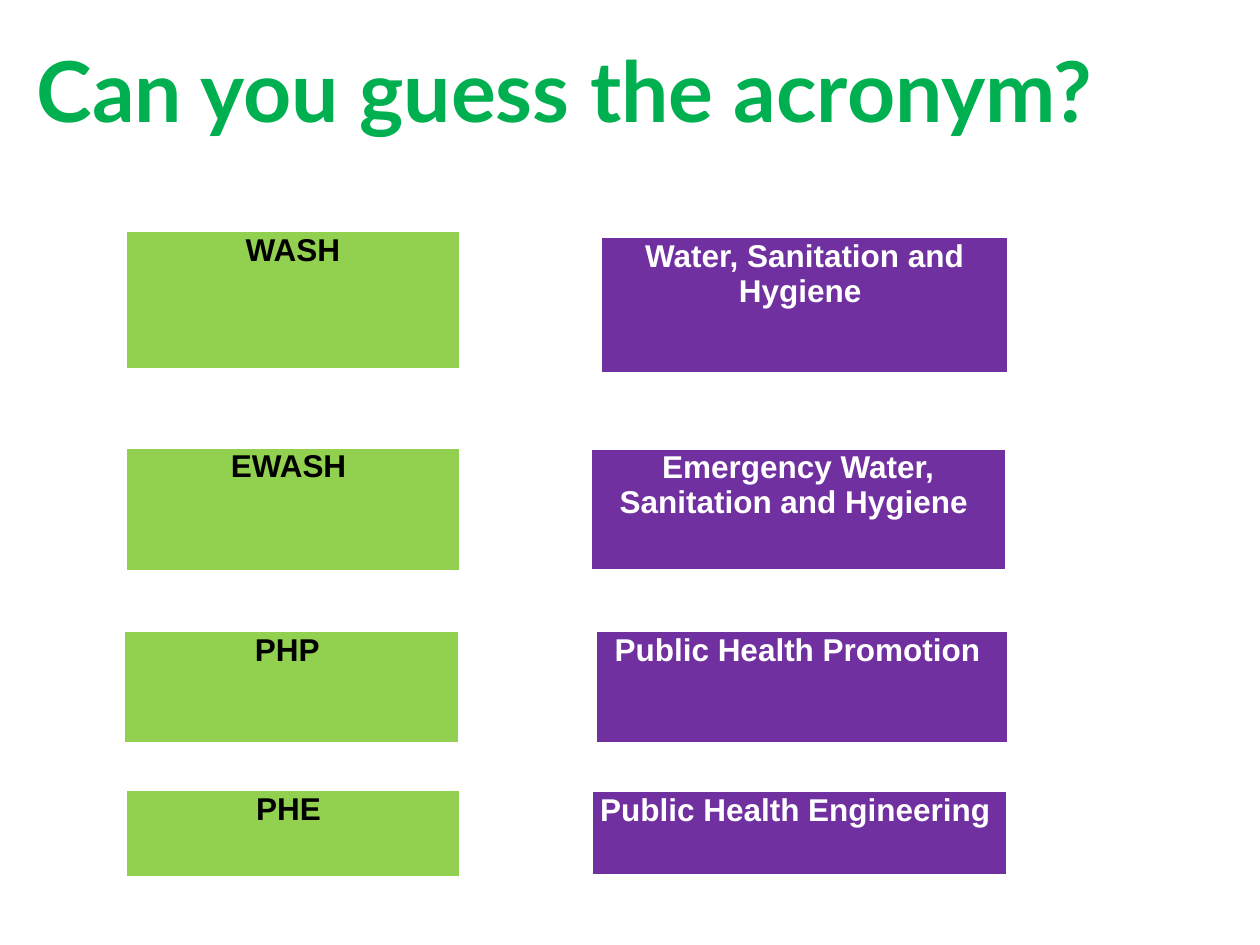
from dataclasses import dataclass

import pptx
import pptx.dml.color
import pptx.enum.text
import pptx.oxml
import pptx.oxml.ns
import pptx.util
from pptx.util import Cm


@dataclass(frozen=True)
class Theme:
    title_color: str = "00B050"
    acronym_fill: str = "92D050"
    acronym_color: str = "000000"
    meaning_fill: str = "7030A0"
    meaning_color: str = "FFFFFF"
    border_color: str = "FFFFFF"
    title_font: str = "Lato"
    body_font: str = "Arial"
    title_size: int = 48
    body_size: int = 18
    thin: float = 1
    thick: float = 1.5


THEME = Theme()
ALIGN = pptx.enum.text.PP_ALIGN


def rgb(value):
    return pptx.dml.color.RGBColor.from_string(value)


def write_text(frame, text, *, font, size, color, align=ALIGN.LEFT, line_spacing=None):
    frame.word_wrap = True
    para = frame.paragraphs[0]
    para.alignment = align
    if line_spacing:
        para.line_spacing = pptx.util.Pt(line_spacing)
    span = para.add_run()
    span.text = text
    span.font.name = font
    span.font.size = pptx.util.Pt(size)
    span.font.bold = True
    span.font.color.rgb = rgb(color)


def set_borders(cell, top, bottom):
    properties = cell._tc.get_or_add_tcPr()
    widths = {"lnL": THEME.thin, "lnR": THEME.thin, "lnT": top, "lnB": bottom}
    for index, (side, width) in enumerate(widths.items()):
        line = pptx.oxml.parse_xml(
            f'<a:{side} {pptx.oxml.ns.nsdecls("a")} w="{int(pptx.util.Pt(width))}">'
            f'<a:solidFill><a:srgbClr val="{THEME.border_color}"/></a:solidFill></a:{side}>'
        )
        properties.insert(index, line)


def add_title(page, box, text):
    left, top, width, height = map(Cm, box)
    frame = page.shapes.add_textbox(left, top, width, height).text_frame
    frame.margin_left = frame.margin_right = frame.margin_top = frame.margin_bottom = 0
    write_text(frame, text, font=THEME.title_font, size=THEME.title_size,
               color=THEME.title_color, line_spacing=THEME.title_size)


def add_card(page, box, text, *, fill, color, top_line, bottom_line):
    left, top, width, height = map(Cm, box)
    table = page.shapes.add_table(1, 1, left, top, width, height).table
    table.first_row = table.horz_banding = False
    cell = table.cell(0, 0)
    cell.margin_left = cell.margin_right = cell.margin_top = Cm(0.03)
    cell.margin_bottom = 0
    cell.fill.solid()
    cell.fill.fore_color.rgb = rgb(fill)
    set_borders(cell, top_line, bottom_line)
    write_text(cell.text_frame, text, font=THEME.body_font, size=THEME.body_size,
               color=color, align=ALIGN.CENTER)


def add_pair(page, acronym, acronym_box, meaning, meaning_box,
             top_line=THEME.thin, bottom_line=THEME.thin):
    lines = {"top_line": top_line, "bottom_line": bottom_line}
    add_card(page, acronym_box, acronym, fill=THEME.acronym_fill,
             color=THEME.acronym_color, **lines)
    add_card(page, meaning_box, meaning, fill=THEME.meaning_fill,
             color=THEME.meaning_color, **lines)


def main():
    deck = pptx.Presentation()
    deck.slide_width, deck.slide_height = Cm(25.4), Cm(19.05)
    page = deck.slides.add_slide(deck.slide_layouts[6])
    add_title(page, (0.74, 1.12, 23.75, 1.78), "Can you guess the acronym?")
    add_pair(page, "WASH", (2.54, 4.67, 6.73, 2.77),
             "Water, Sanitation and Hygiene ", (12.12, 4.78, 8.2, 2.74),
             bottom_line=THEME.thick)
    add_pair(page, "EWASH ", (2.54, 9.02, 6.73, 2.49),
             "Emergency Water, Sanitation and Hygiene ", (11.91, 9.04, 8.36, 2.44),
             top_line=THEME.thick)
    add_pair(page, "PHP ", (2.51, 12.73, 6.73, 2.24),
             "Public Health Promotion ", (12.01, 12.73, 8.31, 2.24))
    add_pair(page, "PHE ", (2.54, 15.93, 6.73, 1.75),
             "Public Health Engineering ", (11.94, 15.95, 8.36, 1.68))
    deck.save("out.pptx")


if __name__ == "__main__":
    main()
